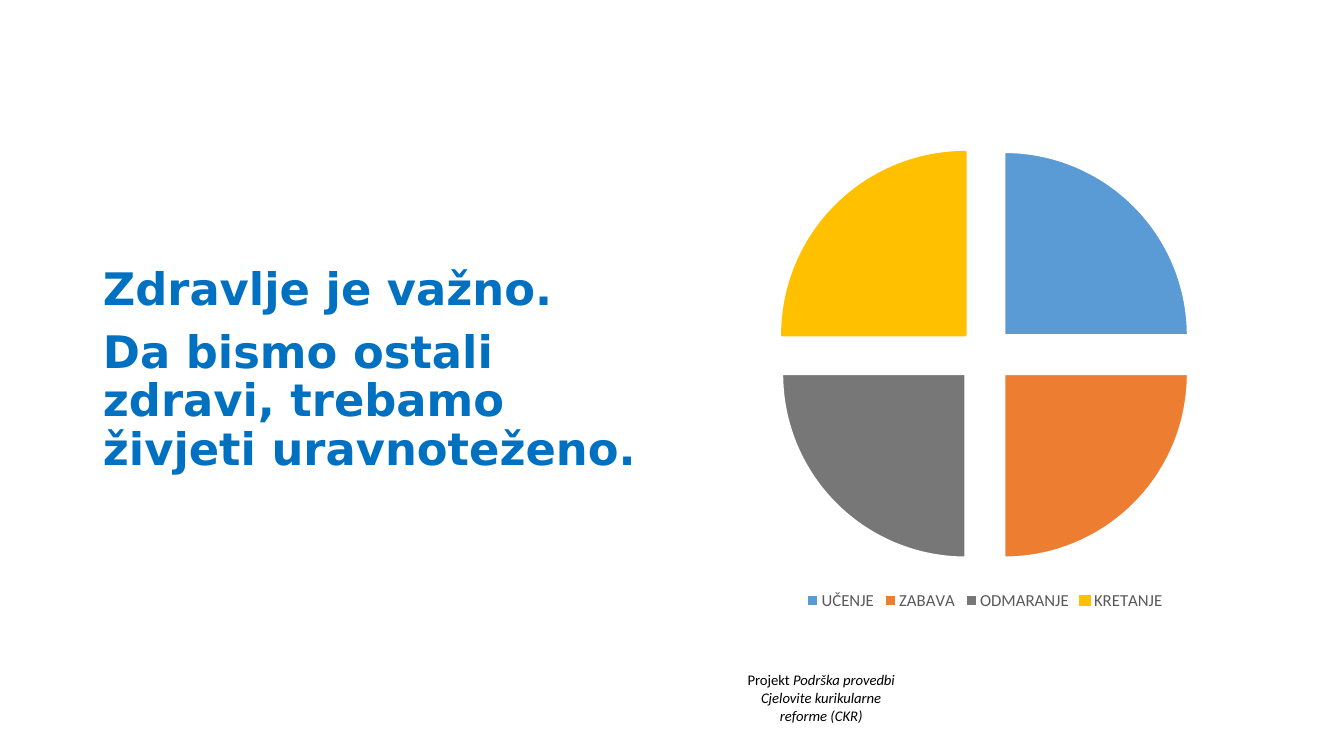
from pptx import Presentation
from pptx.chart.data import CategoryChartData
from pptx.dml.color import RGBColor
from pptx.enum.chart import XL_CHART_TYPE as ChartType, XL_LEGEND_POSITION as LegendPosition
from pptx.enum.text import MSO_ANCHOR as Anchor, MSO_AUTO_SIZE as AutoSize, PP_ALIGN as Align
from pptx.oxml import parse_xml
from pptx.oxml.ns import nsdecls
from pptx.util import Inches, Pt

WHITE, BLACK, GREY, BLUE = "FFFFFF", "000000", "595959", "0070C0"
MESSAGES = ["Zdravlje je važno.", "Da bismo ostali zdravi, trebamo živjeti uravnoteženo."]
# Activity: slice colour, outline colour
ACTIVITIES = {
    "UČENJE": ("5B9BD5", WHITE),
    "ZABAVA": ("ED7D31", WHITE),
    "ODMARANJE": ("777777", WHITE),
    "KRETANJE": ("FFC000", "FFC000"),
}


def colour(value):
    return RGBColor.from_string(value)


def set_font(font, size, name="Calibri", color=BLACK, bold=False, italic=False):
    font.size, font.name = Pt(size), name
    font.bold, font.italic = bold, italic
    font.color.rgb = colour(color)


def add_text(para, text, **style):
    span = para.add_run()
    span.text = text
    set_font(span.font, **style)


def place(shape, box):
    shape.left, shape.top, shape.width, shape.height = map(Inches, box)


def add_message(page, box):
    body = page.placeholders[1]
    place(body, box)
    frame = body.text_frame
    frame.auto_size = AutoSize.NONE
    frame.vertical_anchor = Anchor.TOP
    frame.margin_top = Inches(1.36)
    for index, text in enumerate(MESSAGES):
        para = frame.add_paragraph() if index else frame.paragraphs[0]
        para.line_spacing = 0.9
        para.space_before = Pt(10 if index else 0)
        # No bullet, no hanging indent
        props = para._p.get_or_add_pPr()
        props.set("marL", "0")
        props.set("indent", "0")
        props.append(parse_xml(f"<a:buNone {nsdecls('a')}/>"))
        add_text(para, text, size=32, name="DejaVu Sans", color=BLUE, bold=True)


def add_balance_chart(page, box):
    data = CategoryChartData()
    data.categories = list(ACTIVITIES)
    data.add_series("Series 1", [25] * len(ACTIVITIES))
    chart = page.shapes.add_chart(ChartType.PIE, *map(Inches, box), data).chart
    set_font(chart.font, 10)
    chart.has_title = False

    # Legend
    chart.has_legend = True
    chart.legend.position = LegendPosition.BOTTOM
    chart.legend.include_in_layout = False
    set_font(chart.legend.font, 12, color=GREY)

    # Exploded slices
    plot = chart.plots[0]
    plot.vary_by_categories = True
    series = plot.series[0]
    for index, (fill, outline) in enumerate(ACTIVITIES.values()):
        slice_format = series.points[index].format
        slice_format.fill.solid()
        slice_format.fill.fore_color.rgb = colour(fill)
        slice_format.line.color.rgb = colour(outline)
        slice_format.line.width = Pt(1.5)
    first_point = series._element.find(f"{{{series._element.nsmap['c']}}}dPt")
    first_point.addprevious(parse_xml(f'<c:explosion {nsdecls("c")} val="15"/>'))
    for point in series._element.dPt_lst:
        point.spPr.addprevious(parse_xml(f'<c:explosion {nsdecls("c")} val="15"/>'))


def add_project_note(page, box):
    frame = page.shapes.add_textbox(*map(Inches, box)).text_frame
    frame.word_wrap = True
    first, second = frame.paragraphs[0], frame.add_paragraph()
    first.alignment = second.alignment = Align.CENTER
    add_text(first, "Projekt ", size=10.5)
    add_text(first, "Podrška provedbi", size=10.5, italic=True)
    add_text(second, "Cjelovite kurikularne", size=10.5, italic=True)
    second.add_line_break()
    add_text(second, "reforme (CKR)", size=10.5, italic=True)


def main():
    deck = Presentation()
    deck.slide_width, deck.slide_height = Inches(13.33), Inches(7.5)
    page = deck.slides.add_slide(deck.slide_layouts[1])
    title = page.shapes.title._element
    title.getparent().remove(title)
    add_project_note(page, (6.99, 6.61, 2.31, 0.63))
    add_message(page, (0.92, 1.29, 5.67, 5.47))
    add_balance_chart(page, (6.58, 1.29, 6.38, 4.81))
    deck.save("out.pptx")


if __name__ == "__main__":
    main()
